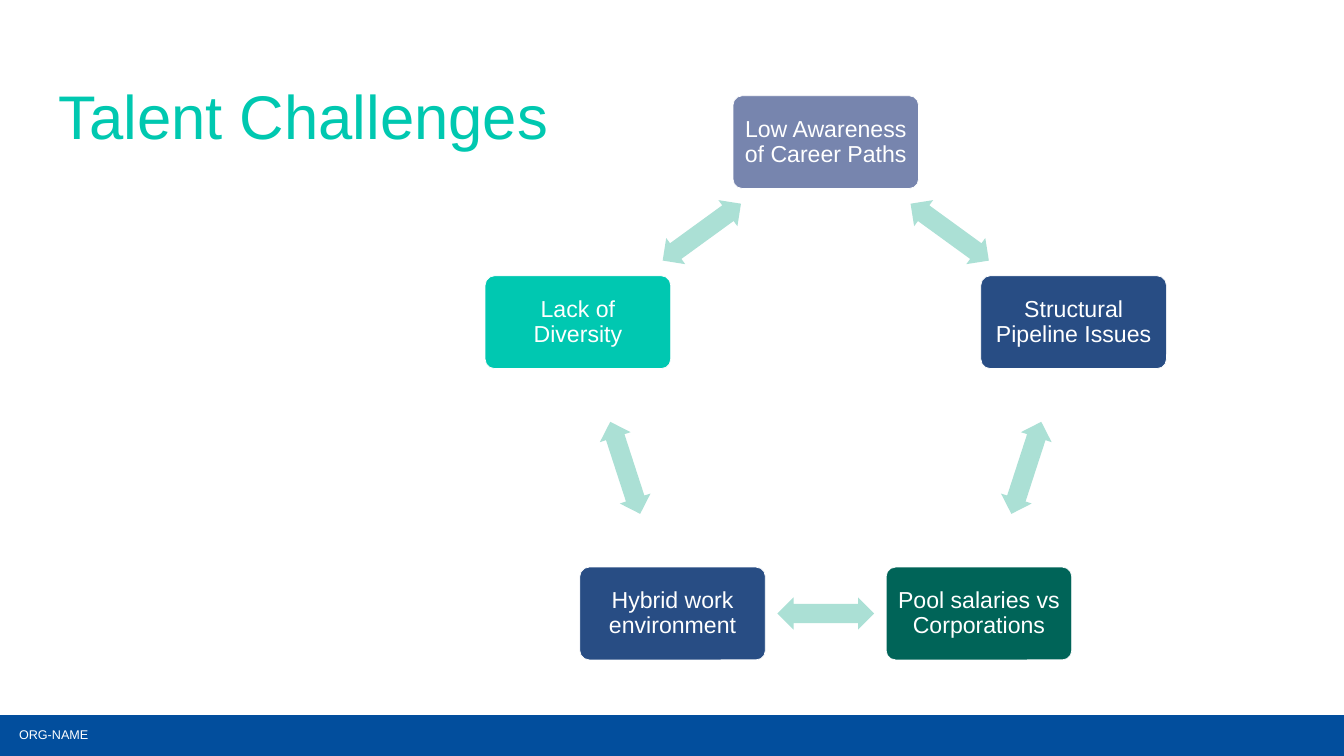
from math import cos, radians, sin

from pptx import Presentation
from pptx.dml.color import RGBColor
from pptx.enum.shapes import MSO_SHAPE as Shape
from pptx.enum.text import MSO_ANCHOR as Anchor, PP_ALIGN as Align
from pptx.util import Pt

PX = 9144  # 100 px to the inch
COLORS = {
    "white": "FFFFFF",
    "bar": "024E9D",
    "title": "00C8B0",
    "arrow": "ABE0D5",
    "slate": "7785AE",
    "navy": "284D84",
    "forest": "006458",
    "teal": "00C8B1",
}


def add_filled_shape(kind, left, top, width, height, color):
    shape = slide.shapes.add_shape(
        kind, *(round(length * PX) for length in (left, top, width, height)))
    shape.shadow.inherit = False
    shape.fill.solid()
    shape.fill.fore_color.rgb = RGBColor.from_string(COLORS[color])
    shape.line.fill.background()
    return shape


def write(shape, text, size, color):
    shape.text_frame.word_wrap = True
    paragraph = shape.text_frame.paragraphs[0]
    run = paragraph.add_run()
    run.text = text
    run.font.name = "Arial"
    run.font.size = Pt(size)
    run.font.color.rgb = RGBColor.from_string(COLORS[color])
    return paragraph


presentation = Presentation()
presentation.slide_width = 2666 * PX
presentation.slide_height = 1500 * PX
slide = presentation.slides.add_slide(presentation.slide_layouts[6])

# Footer bar and title
add_filled_shape(Shape.RECTANGLE, 0, 1419, 2671, 81, "bar")
footer = slide.shapes.add_textbox(28 * PX, 1438 * PX, 1100 * PX, 40 * PX)
write(footer, "ORG-NAME", 18, "white")
title = slide.shapes.add_textbox(106 * PX, 167 * PX, 2123 * PX, 212 * PX)
write(title, "Talent Challenges", 88, "title").line_spacing = 0.9

# Ring of challenges, clockwise from the top, with an arrow after each box
challenges = [
    ("Low Awareness of Career Paths", "slate"),
    ("Structural Pipeline Issues", "navy"),
    ("Pool salaries vs Corporations", "forest"),
    ("Hybrid work environment", "navy"),
    ("Lack of Diversity", "teal"),
]
CENTER_X, CENTER_Y, RADIUS = 1638, 799, 517
BOX_WIDTH, BOX_HEIGHT = 368, 184
ARROW_WIDTH, ARROW_HEIGHT = 192, 64
STEP = 360 / len(challenges)
arrow_radius = RADIUS * cos(radians(STEP / 2))

for index, (label, color) in enumerate(challenges):
    angle = radians(index * STEP)
    x = CENTER_X + RADIUS * sin(angle)
    y = CENTER_Y - RADIUS * cos(angle)
    box = add_filled_shape(Shape.ROUNDED_RECTANGLE, x - BOX_WIDTH / 2,
                           y - BOX_HEIGHT / 2, BOX_WIDTH, BOX_HEIGHT, color)
    box.adjustments[0] = 0.1
    box.line.color.rgb = RGBColor.from_string(COLORS["white"])
    box.line.width = Pt(1)
    frame = box.text_frame
    frame.margin_left = frame.margin_right = 14 * PX
    frame.margin_top = frame.margin_bottom = 14 * PX
    frame.vertical_anchor = Anchor.MIDDLE
    paragraph = write(box, label, 33, "white")
    paragraph.alignment = Align.CENTER
    paragraph.line_spacing = 0.9

    turn = (index + 0.5) * STEP
    x = CENTER_X + arrow_radius * sin(radians(turn))
    y = CENTER_Y - arrow_radius * cos(radians(turn))
    arrow = add_filled_shape(Shape.LEFT_RIGHT_ARROW, x - ARROW_WIDTH / 2,
                             y - ARROW_HEIGHT / 2, ARROW_WIDTH, ARROW_HEIGHT,
                             "arrow")
    arrow.adjustments[0] = 0.6
    arrow.adjustments[1] = 0.5
    arrow.rotation = turn

presentation.save("out.pptx")
